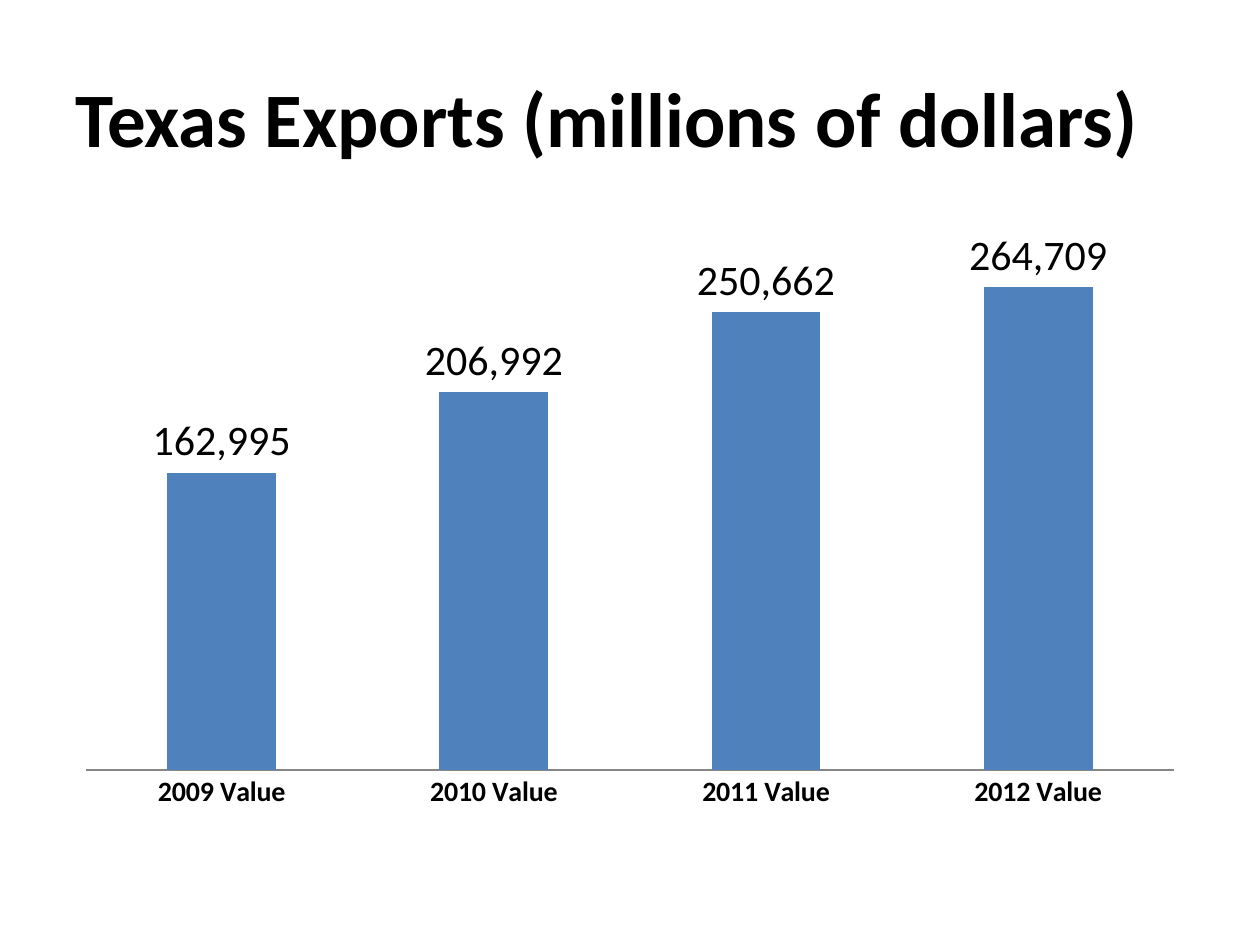
from lxml import etree
from pptx import Presentation
from pptx.chart.data import CategoryChartData
from pptx.dml.color import RGBColor
from pptx.enum.chart import XL_CHART_TYPE, XL_LABEL_POSITION, XL_TICK_MARK
from pptx.enum.text import MSO_ANCHOR, PP_ALIGN
from pptx.oxml.ns import qn
from pptx.util import Cm, Pt

FONT = "Calibri"
COLORS = {"text": "000000", "bar": "4F81BD", "axis": "868686"}
EXPORTS = {
    "2009 Value": 162995,
    "2010 Value": 206992,
    "2011 Value": 250662,
    "2012 Value": 264709,
}


def color(name):
    return RGBColor.from_string(COLORS[name])


def format_font(font, size, bold=False):
    font.name = FONT
    font.size = Pt(size)
    font.bold = bold
    font.color.rgb = color("text")


def add_title(slide, text):
    title = slide.shapes.title
    title.left, title.top, title.width, title.height = Cm(1.27), Cm(0.76), Cm(22.86), Cm(3.18)
    text_frame = title.text_frame
    text_frame.text = text
    text_frame.vertical_anchor = MSO_ANCHOR.MIDDLE
    paragraph = text_frame.paragraphs[0]
    paragraph.alignment = PP_ALIGN.LEFT
    format_font(paragraph.runs[0].font, 44, bold=True)


def set_plot_layout(chart, **fractions):
    """Fix the inner plot area as fractions (x, y, w, h) of the chart."""
    plot_area = chart.plots[0]._element.getparent()
    for old_layout in plot_area.findall(qn("c:layout")):
        plot_area.remove(old_layout)
    layout = etree.Element(qn("c:layout"))
    plot_area.insert(0, layout)
    manual = etree.SubElement(layout, qn("c:manualLayout"))
    settings = {"layoutTarget": "inner", "xMode": "edge", "yMode": "edge", **fractions}
    for tag, value in settings.items():
        etree.SubElement(manual, qn(f"c:{tag}")).set("val", str(value))


def format_axes(chart):
    category_axis = chart.category_axis
    category_axis.major_tick_mark = XL_TICK_MARK.NONE
    category_axis.format.line.color.rgb = color("axis")
    category_axis.format.line.width = Pt(0.75)
    format_font(category_axis.tick_labels.font, 16, bold=True)

    value_axis = chart.value_axis
    value_axis.minimum_scale = 0
    value_axis.maximum_scale = 300000
    value_axis.has_major_gridlines = False
    value_axis.visible = False


def add_column_chart(slide, values):
    chart_data = CategoryChartData(number_format="#,##0")
    chart_data.categories = list(values)
    chart_data.add_series("Series 1", list(values.values()))
    chart = slide.shapes.add_chart(
        XL_CHART_TYPE.COLUMN_CLUSTERED, Cm(1.27), Cm(4.24), Cm(22.86), Cm(12.27), chart_data
    ).chart
    format_font(chart.font, 10)
    chart.has_title = False
    chart.has_legend = False
    set_plot_layout(chart, x=0.02, y=0.02, w=0.96, h=0.9)
    format_axes(chart)

    plot = chart.plots[0]
    plot.gap_width = 150
    plot.vary_by_categories = False
    series = plot.series[0]
    series.format.fill.solid()
    series.format.fill.fore_color.rgb = color("bar")
    labels = series.data_labels
    labels.show_value = True
    labels.number_format = "#,##0"
    labels.number_format_is_linked = False
    labels.position = XL_LABEL_POSITION.OUTSIDE_END
    format_font(labels.font, 24)


def main():
    presentation = Presentation()
    presentation.slide_width, presentation.slide_height = Cm(25.4), Cm(19.05)
    slide = presentation.slides.add_slide(presentation.slide_layouts[5])
    add_title(slide, "Texas Exports (millions of dollars)")
    add_column_chart(slide, EXPORTS)
    presentation.save("out.pptx")


if __name__ == "__main__":
    main()
